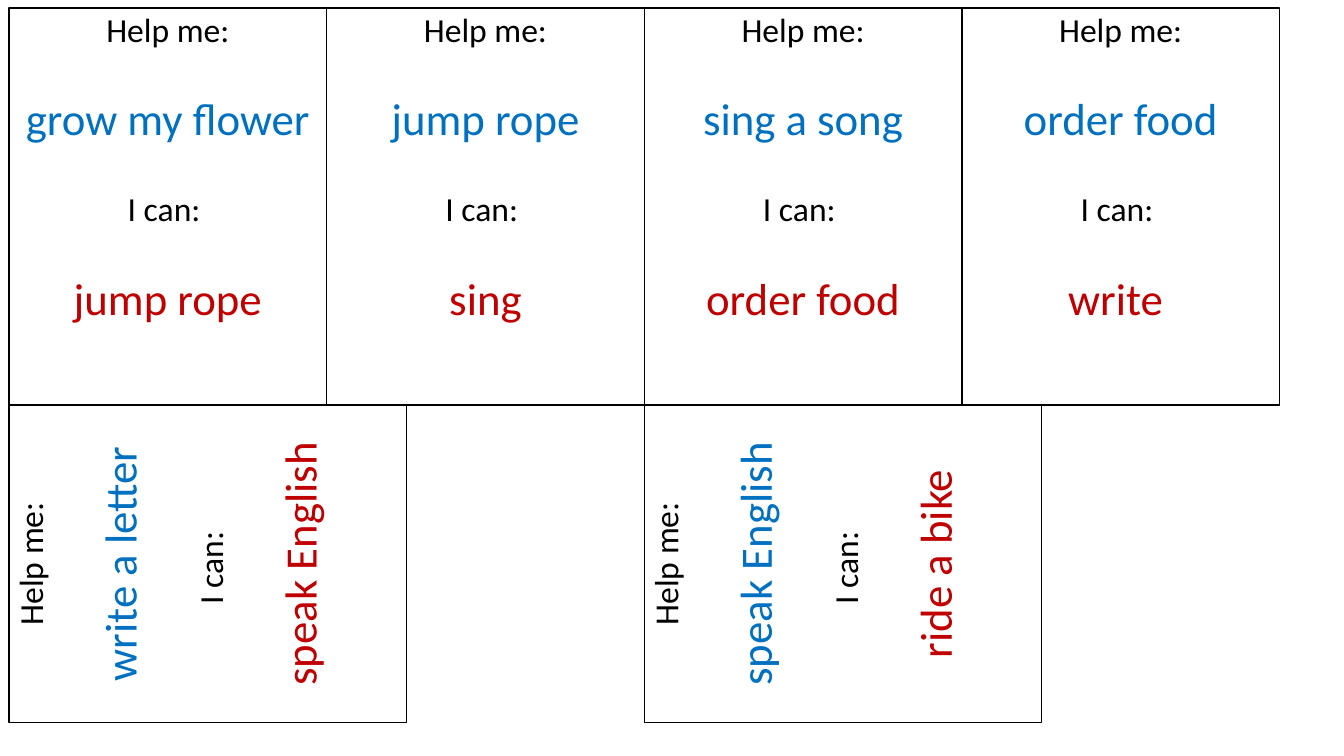
from dataclasses import dataclass

from pptx import Presentation
from pptx.dml.color import RGBColor
from pptx.enum.shapes import MSO_SHAPE as Preset
from pptx.enum.text import MSO_ANCHOR as Anchor, MSO_AUTO_SIZE as AutoSize, PP_ALIGN as Align
from pptx.shapes.autoshape import Shape
from pptx.slide import Slide
from pptx.util import Inches, Pt

LEFT, TOP = 0.09, 0.08
COLUMN, ROW = 3.15, 3.94
BLACK, WHITE, BLUE, RED = "000000", "FFFFFF", "0070C0", "C00000"


@dataclass(frozen=True)
class Card:
    """One speaking card and its cell in the grid."""
    column: int
    row: int
    need: str
    skill: str
    turned: bool = False


CARDS = (
    Card(0, 0, "grow my flower", "jump rope"),
    Card(1, 0, "jump rope", "sing"),
    Card(2, 0, "sing a song", "order food"),
    Card(3, 0, "order food", "write "),
    Card(0, 1, "write a letter", "speak English", turned=True),
    Card(2, 1, "speak English", "ride a bike", turned=True),
)


def color(code: str) -> RGBColor:
    """Turn a hex string into a colour."""
    return RGBColor.from_string(code)


def place(box: Shape, card: Card) -> None:
    """Put a card in its cell; a turned card lies on its side from the cell's corner."""
    shift = (ROW - COLUMN) / 2 if card.turned else 0
    box.left = Inches(LEFT + card.column * COLUMN + shift)
    box.top = Inches(TOP + card.row * ROW - shift)
    box.width, box.height = Inches(COLUMN), Inches(ROW)
    box.rotation = 270 if card.turned else 0


def write(box: Shape, card: Card) -> None:
    """Write the two prompts and their answers."""
    frame = box.text_frame
    frame.word_wrap = True
    frame.auto_size = AutoSize.NONE
    frame.vertical_anchor = Anchor.TOP
    lines = (
        ("Help me:", 24, BLACK),
        (card.need, 32, BLUE),
        ("I can: ", 24, BLACK),
        (card.skill, 32, RED),
    )
    frame.text = "\n".join(text for text, _, _ in lines)
    for index, (para, (_, size, code)) in enumerate(zip(frame.paragraphs, lines)):
        para.alignment = Align.CENTER
        para.line_spacing = 0.9
        para.space_before = Pt(34 if index else 0)
        para.font.name = "Calibri"
        para.font.size = Pt(size)
        para.font.color.rgb = color(code)


def draw(page: Slide, card: Card, is_title: bool) -> None:
    """Draw a card, using the title placeholder for the first one."""
    if is_title:
        box = page.shapes.title
    else:
        box = page.shapes.add_shape(Preset.RECTANGLE, 0, 0, 0, 0)
        box.shadow.inherit = False
    place(box, card)
    box.fill.solid()
    box.fill.fore_color.rgb = color(WHITE)
    box.line.color.rgb = color(BLACK)
    box.line.width = Pt(1)
    write(box, card)


def main() -> None:
    """Build the page of cards."""
    deck = Presentation()
    deck.slide_width, deck.slide_height = Inches(13.33), Inches(7.5)
    page = deck.slides.add_slide(deck.slide_layouts.get_by_name("Title Only"))
    for index, card in enumerate(CARDS):
        draw(page, card, is_title=index == 0)
    deck.save("out.pptx")


if __name__ == "__main__":
    main()
